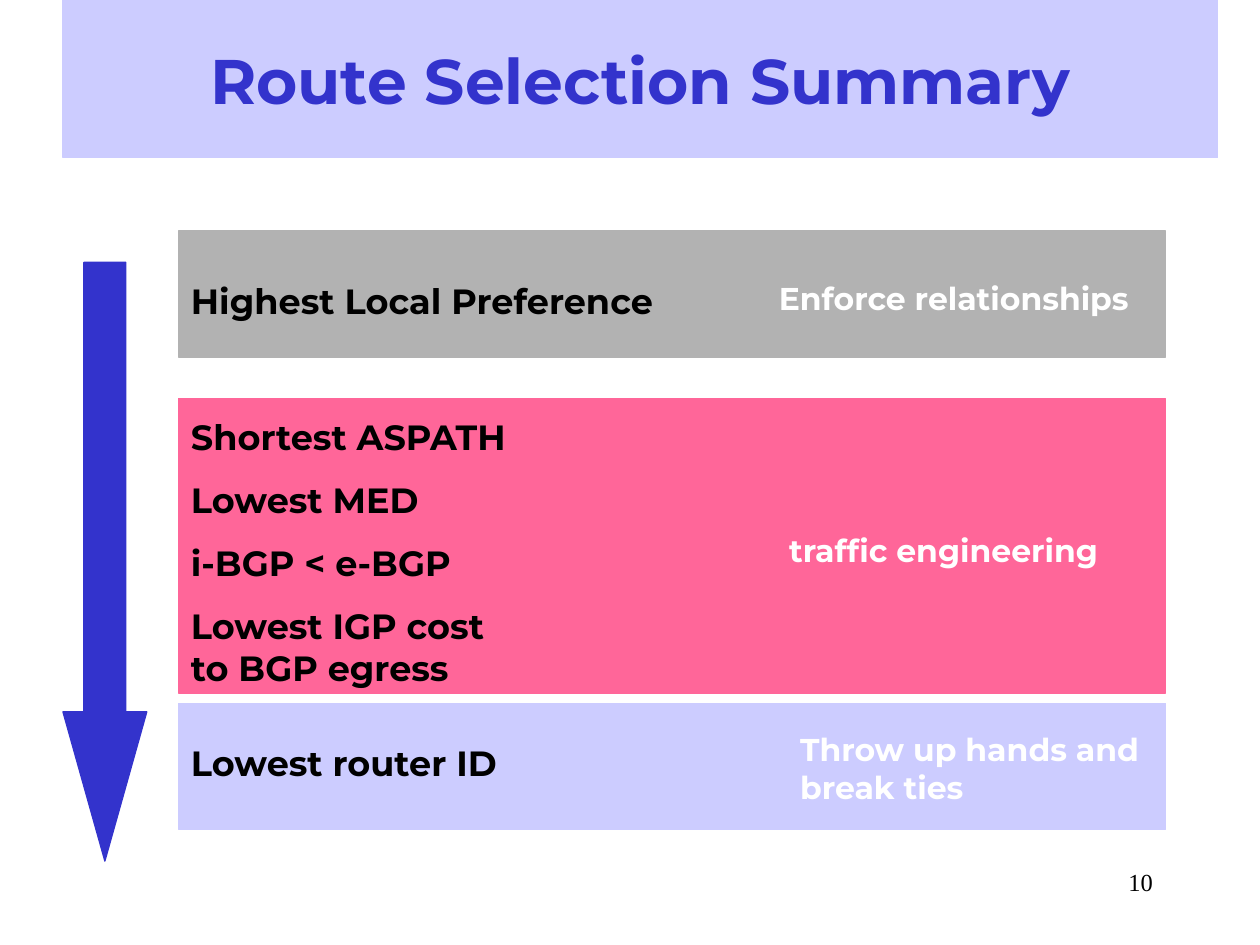
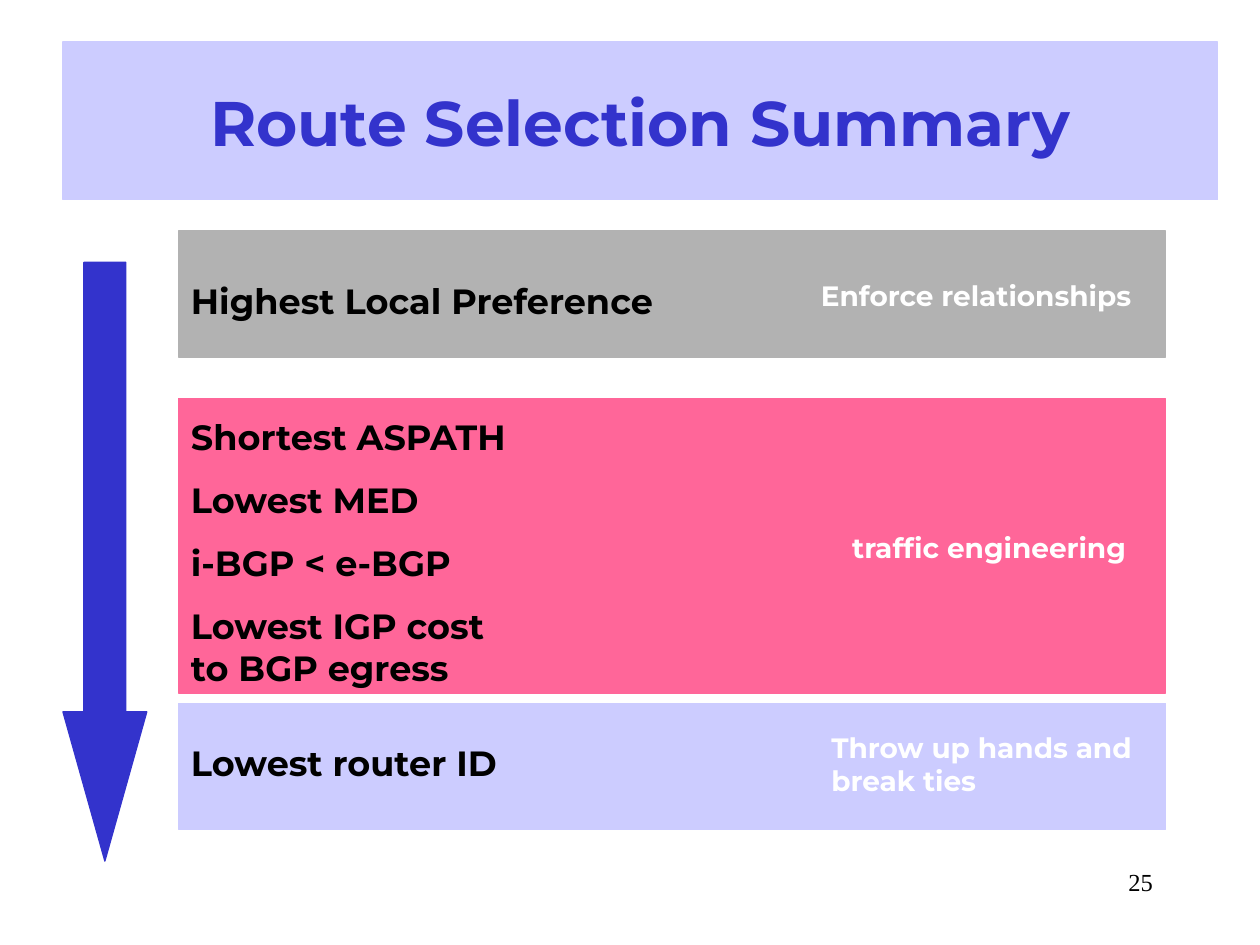
from pptx import Presentation
from pptx.dml.color import RGBColor
from pptx.enum.shapes import MSO_SHAPE as SHAPE
from pptx.enum.text import MSO_ANCHOR as ANCHOR, MSO_AUTO_SIZE as AUTO, PP_ALIGN as ALIGN
from pptx.util import Cm, Pt

COLORS = {
    "blue": "3333CC",
    "lavender": "CCCCFF",
    "gray": "B2B2B2",
    "pink": "FF6699",
    "black": "000000",
    "white": "FFFFFF",
}
FONT, NUMBER_FONT = "Montserrat", "Times New Roman"

BAND_LEFT, BAND_WIDTH = 3.6, 19.9
BANDS = [  # top, height, color
    (14.18, 2.54, "lavender"),
    (4.66, 2.54, "gray"),
    (8.04, 5.93, "pink"),
]

RULE_SIZE = 20
TRAFFIC_TOP, TRAFFIC_STEP = 8.26, 1.27
TRAFFIC_RULES = [  # text, width
    ("Shortest ASPATH", 7.26),
    ("Lowest MED", 5.31),
    ("i-BGP < e-BGP", 5.92),
    ("Lowest IGP cost\nto BGP egress", 7.11),
]

GOALS = [  # text, top
    ("traffic engineering", 10.58),
    ("Enforce relationships", 5.5),
    ("Throw up hands and\nbreak ties", 14.6),
]


class Deck:
    def __init__(self):
        self.prs = Presentation()
        self.prs.slide_width, self.prs.slide_height = Cm(25.4), Cm(19.05)
        self.s = None

    def new_slide(self):
        self.s = self.prs.slides.add_slide(self.prs.slide_layouts[6])

    def set_text(self, tf, text, size, color, font=FONT, bold=True, align=ALIGN.LEFT):
        tf.text = text
        for p in tf.paragraphs:
            p.alignment = align
            for r in p.runs:
                r.font.name, r.font.size, r.font.bold = font, Pt(size), bold
                r.font.color.rgb = RGBColor.from_string(COLORS[color])

    def block(self, kind, left, top, width, height, color):
        """Add a preset shape with fill and line of one color."""
        sp = self.s.shapes.add_shape(kind, Cm(left), Cm(top), Cm(width), Cm(height))
        sp.shadow.inherit = False
        rgb = RGBColor.from_string(COLORS[color])
        sp.fill.solid()
        sp.fill.fore_color.rgb = rgb
        sp.line.color.rgb = rgb
        sp.line.width = Pt(0.75)
        return sp

    def title(self, text, top):
        sp = self.block(SHAPE.RECTANGLE, 1.27, top, 23.28, 3.18, "lavender")
        sp.text_frame.vertical_anchor = ANCHOR.MIDDLE
        self.set_text(sp.text_frame, text, 36, "blue", align=ALIGN.CENTER)

    def label(self, text, left, top, width, size, color):
        """Add unwrapped text in a box as tall as its lines."""
        height = 0.25 + 0.043 * size * len(text.split("\n"))
        sp = self.s.shapes.add_textbox(Cm(left), Cm(top), Cm(width), Cm(height))
        tf = sp.text_frame
        tf.word_wrap = False
        tf.auto_size = AUTO.SHAPE_TO_FIT_TEXT
        self.set_text(tf, text, size, color)

    def arrow(self):
        sp = self.block(SHAPE.DOWN_ARROW, 1.27, 5.29, 1.69, 12.07, "blue")
        sp.adjustments[0], sp.adjustments[1] = 0.5, 1.78

    def page_number(self, number):
        sp = self.s.shapes.add_textbox(Cm(18.2), Cm(17.36), Cm(5.29), Cm(1.27))
        sp.text_frame.word_wrap = True
        self.set_text(sp.text_frame, str(number), 14, "black", NUMBER_FONT, False, ALIGN.RIGHT)


def route_selection(deck, number, title_top, goal_size, goal_boxes):
    """Build a summary slide; goal_boxes holds left and width of each goal."""
    deck.new_slide()
    deck.page_number(number)
    for top, height, color in BANDS:
        deck.block(SHAPE.RECTANGLE, BAND_LEFT, top, BAND_WIDTH, height, color)
    deck.title("Route Selection Summary", title_top)

    deck.label("Highest Local Preference", BAND_LEFT, 5.5, 10.31, RULE_SIZE, "black")
    for i, (text, width) in enumerate(TRAFFIC_RULES):
        top = TRAFFIC_TOP + i * TRAFFIC_STEP
        deck.label(text, BAND_LEFT, top, width, RULE_SIZE, "black")
    deck.label("Lowest router ID", BAND_LEFT, 14.82, 6.99, RULE_SIZE, "black")

    for (text, top), (left, width) in zip(GOALS, goal_boxes):
        deck.label(text, left, top, width, goal_size, "white")
    deck.arrow()


def main():
    deck = Deck()
    route_selection(deck, 10, 0, 18, [(15.66, 7.14), (15.45, 7.92), (15.88, 7.54)])
    route_selection(deck, 25, 0.85, 16, [(16.93, 6.4), (16.3, 7.09), (16.51, 6.73)])
    deck.prs.save("out.pptx")


if __name__ == "__main__":
    main()
